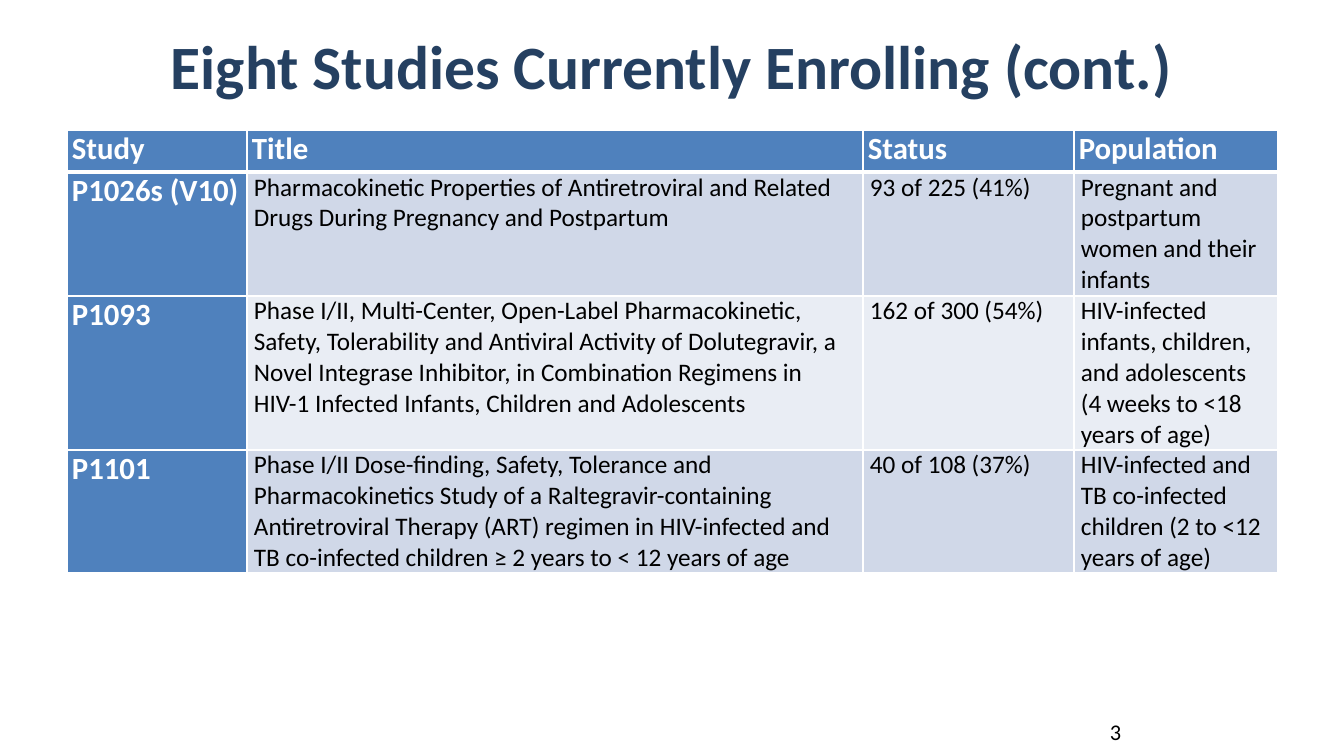
"""Build the slide that lists the studies currently enrolling."""
from lxml import etree
from pptx import Presentation
from pptx.dml.color import RGBColor
from pptx.enum.text import MSO_ANCHOR, PP_ALIGN
from pptx.oxml.ns import qn
from pptx.util import Pt

MIDDLE = MSO_ANCHOR.MIDDLE
CENTER = PP_ALIGN.CENTER
LEFT = PP_ALIGN.LEFT
TITLE_ONLY = 5
FONT = "Calibri"
WHITE, BLACK, NAVY, BLUE = "FFFFFF", "000000", "254061", "4F81BD"
BANDS = ["D0D8E8", "E9EDF4"]
COLUMN_WIDTHS = [180, 616, 211, 204]
ROW_HEIGHTS = [42, 124, 154, 123]
STUDIES = [
    ["Study", "Title", "Status", "Population"],
    ["P1026s (V10)",
     "Pharmacokinetic Properties of Antiretroviral and Related Drugs "
     "During Pregnancy and Postpartum",
     "93 of 225 (41%)",
     "Pregnant and postpartum women and their infants"],
    ["P1093",
     "Phase I/II, Multi-Center, Open-Label Pharmacokinetic, Safety, "
     "Tolerability and Antiviral Activity of Dolutegravir, a Novel Integrase "
     "Inhibitor, in Combination Regimens in\n"
     "HIV-1 Infected Infants, Children and Adolescents",
     "162 of 300 (54%)",
     "HIV-infected infants, children, and adolescents "
     "(4 weeks to <18 years of age)"],
    ["P1101",
     "Phase I/II Dose-finding, Safety, Tolerance and Pharmacokinetics Study "
     "of a Raltegravir-containing Antiretroviral Therapy (ART) regimen in "
     "HIV-infected and TB co-infected children ≥ 2 years to < 12 years of age",
     "40 of 108 (37%)",
     "HIV-infected and TB co-infected children (2 to <12 years of age)"],
]


def px(length):
    return round(length * 914400 / 100.8)


def write(text_frame, text, size, color, bold, alignment):
    text_frame.text = text
    for paragraph in text_frame.paragraphs:
        paragraph.alignment = alignment
        for run in paragraph.runs:
            run.font.name = FONT
            run.font.size = Pt(size)
            run.font.bold = bold
            run.font.color.rgb = RGBColor.from_string(color)


presentation = Presentation()
presentation.slide_width = px(1344)
presentation.slide_height = px(756)
slide = presentation.slides.add_slide(presentation.slide_layouts[TITLE_ONLY])

title = slide.shapes.title
title.left, title.top, title.width, title.height = px(67), 0, px(1210), px(130)
title.text_frame.vertical_anchor = MIDDLE
write(title.text_frame, "Eight Studies Currently Enrolling (cont.)", 44, NAVY, True, CENTER)

table = slide.shapes.add_table(
    len(ROW_HEIGHTS), len(COLUMN_WIDTHS), px(67), px(130),
    px(sum(COLUMN_WIDTHS)), px(sum(ROW_HEIGHTS))).table
for column, width in zip(table.columns, COLUMN_WIDTHS):
    column.width = px(width)
for row, height in zip(table.rows, ROW_HEIGHTS):
    row.height = px(height)

for row_index, study in enumerate(STUDIES):
    for column_index, text in enumerate(study):
        cell = table.cell(row_index, column_index)
        is_heading = row_index == 0 or column_index == 0
        cell.margin_left = cell.margin_right = px(5 if is_heading else 7)
        cell.margin_top = cell.margin_bottom = 0
        if is_heading:
            write(cell.text_frame, text, 22, WHITE, True, LEFT)
        else:
            write(cell.text_frame, text, 18, BLACK, False, LEFT)

        borders = {"a:lnL": 1, "a:lnR": 1,
                   "a:lnT": 3 if row_index == 1 else 1,
                   "a:lnB": 3 if row_index == 0 else 1}
        properties = cell._tc.get_or_add_tcPr()
        for tag, weight in borders.items():
            line = etree.SubElement(properties, qn(tag), w=str(Pt(weight)))
            line_fill = etree.SubElement(line, qn("a:solidFill"))
            etree.SubElement(line_fill, qn("a:srgbClr"), val=WHITE)

        cell.fill.solid()
        fill_color = BLUE if is_heading else BANDS[(row_index - 1) % 2]
        cell.fill.fore_color.rgb = RGBColor.from_string(fill_color)

slide_number = slide.shapes.add_textbox(px(1065), px(712), px(101), px(40))
slide_number.text_frame.word_wrap = True
slide_number.text_frame.vertical_anchor = MIDDLE
write(slide_number.text_frame, "3", 16, BLACK, False, CENTER)

presentation.save("out.pptx")
